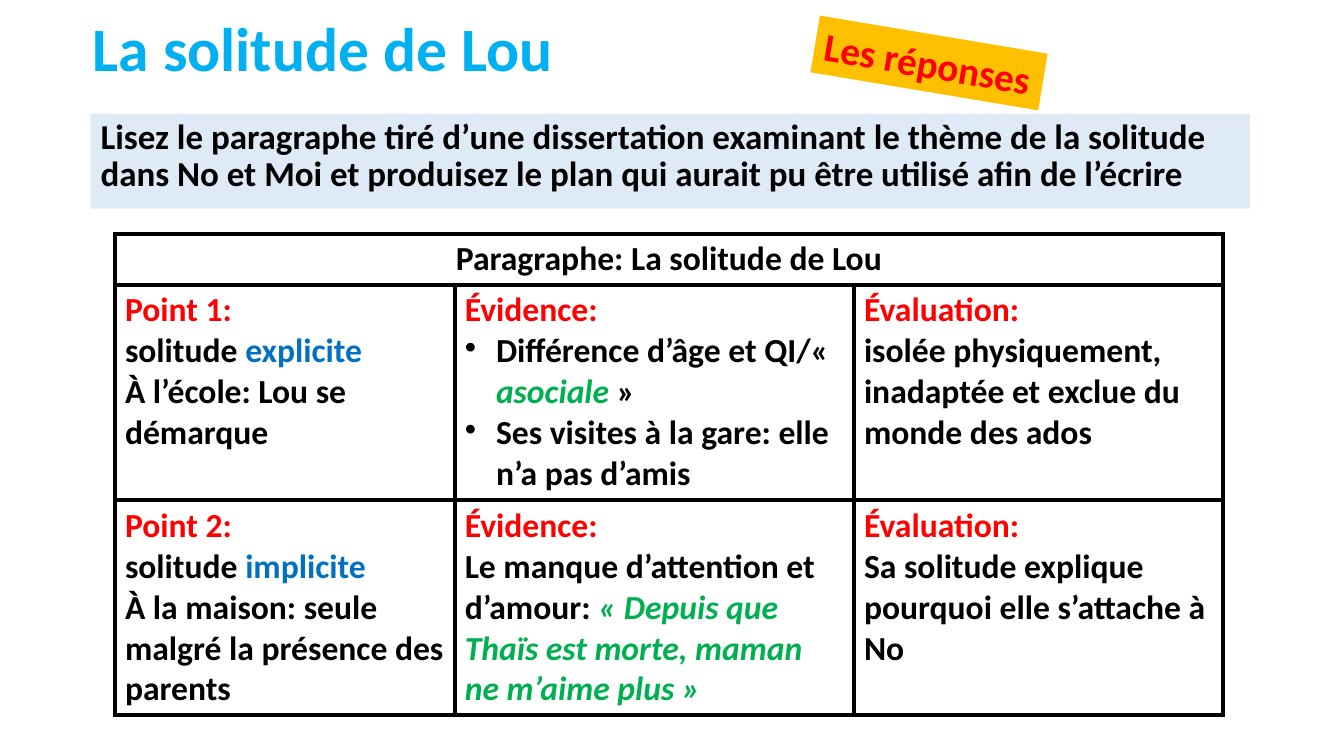
import pptx
import pptx.dml.color
import pptx.enum.shapes
import pptx.enum.text
import pptx.oxml
import pptx.oxml.ns
import pptx.util
from pptx.util import Inches

COLOURS = {
    "title": "00B0F0", "band": "DEEBF7", "tag": "FFC000", "text": "000000",
    "heading": "FF0000", "key": "0070C0", "quote": "00B050", "paper": "FFFFFF",
}
ALIGN = pptx.enum.text.PP_ALIGN
ANCHOR = pptx.enum.text.MSO_ANCHOR

COLUMN_WIDTHS = [3.37, 3.96, 3.66]
ROW_HEIGHTS = [0.5, 2.1, 2.1]
PLAN_HEADING = "Paragraphe: La solitude de Lou"
PLAN = [
    [
        ("Point 1:", [[("solitude ", "text"), ("explicite", "key")],
                      [("À l’école: Lou se démarque", "text")]], False),
        ("Évidence:", [[("Différence d’âge et QI/« ", "text"), ("asociale", "quote"), (" »", "text")],
                       [("Ses visites à la gare: elle n’a pas d’amis", "text")]], True),
        ("Évaluation:", [[("isolée physiquement, inadaptée et exclue du monde des ados", "text")]], False),
    ],
    [
        ("Point 2:", [[("solitude ", "text"), ("implicite", "key")],
                      [("À la maison: seule malgré la présence des parents", "text")]], False),
        ("Évidence:", [[("Le manque d’attention et d’amour: ", "text"),
                        ("« Depuis que Thaïs est morte, maman ne m’aime plus »", "quote")]], False),
        ("Évaluation:", [[("Sa solitude explique pourquoi elle s’attache à No", "text")]], False),
    ],
]


def colour(name):
    """Return the named colour."""
    return pptx.dml.color.RGBColor.from_string(COLOURS[name])


def write(para, spans, size=24, align=ALIGN.LEFT, spacing=None, bullet=False):
    """Write (text, colour) spans in a paragraph; quotes are italic."""
    if bullet:
        indent = Inches(0.31)
        properties = para._p.get_or_add_pPr()
        properties.set("marL", str(indent))
        properties.set("indent", str(-indent))
        mark = pptx.oxml.parse_xml(f'<a:buChar {pptx.oxml.ns.nsdecls("a")} char="•"/>')
        properties.append(mark)
    para.alignment = align
    if spacing:
        para.line_spacing = spacing
    for text, name in spans:
        span = para.add_run()
        span.text = text
        span.font.name = "Calibri"
        span.font.size = pptx.util.Pt(size)
        span.font.bold = True
        span.font.italic = name == "quote"
        span.font.color.rgb = colour(name)


def place_title(page, left, top, width, height):
    """Place and format the slide title."""
    title = page.shapes.title
    title.left, title.top, title.width, title.height = map(Inches, (left, top, width, height))
    title.text_frame.vertical_anchor = ANCHOR.MIDDLE
    title.text_frame.auto_size = pptx.enum.text.MSO_AUTO_SIZE.NONE
    write(title.text_frame.paragraphs[0], [("La solitude de Lou", "title")], size=44, spacing=0.9)


def add_label(page, left, top, width, height, text, fill, ink="text", size=25,
              wrap=True, turn=0, spacing=None):
    """Add a filled rectangle with text from its top left."""
    label = page.shapes.add_shape(pptx.enum.shapes.MSO_SHAPE.RECTANGLE,
                                  *map(Inches, (left, top, width, height)))
    label.shadow.inherit = False
    label.fill.solid()
    label.fill.fore_color.rgb = colour(fill)
    label.line.fill.background()
    label.rotation = turn
    label.text_frame.word_wrap = wrap
    label.text_frame.vertical_anchor = ANCHOR.TOP
    write(label.text_frame.paragraphs[0], [(text, ink)], size=size, spacing=spacing)


def format_cell(cell):
    """Give a cell a plain fill and thick black borders."""
    properties = cell._tc.get_or_add_tcPr()
    for side in ("lnL", "lnR", "lnT", "lnB"):
        properties.append(pptx.oxml.parse_xml(
            f'<a:{side} {pptx.oxml.ns.nsdecls("a")} w="{pptx.util.Pt(3)}"><a:solidFill>'
            f'<a:srgbClr val="{COLOURS["text"]}"/></a:solidFill></a:{side}>'))
    cell.fill.solid()
    cell.fill.fore_color.rgb = colour("paper")


def fill_cell(cell, heading, lines, bullet):
    """Write a red heading and the lines below it."""
    frame = cell.text_frame
    write(frame.paragraphs[0], [(heading, "heading")])
    for spans in lines:
        write(frame.add_paragraph(), spans, bullet=bullet)


def add_plan(page, left, top, width, height):
    """Add the table with the essay plan."""
    table = page.shapes.add_table(len(ROW_HEIGHTS), len(COLUMN_WIDTHS),
                                  *map(Inches, (left, top, width, height))).table
    for column, size in zip(table.columns, COLUMN_WIDTHS):
        column.width = Inches(size)
    for row, size in zip(table.rows, ROW_HEIGHTS):
        row.height = Inches(size)
    for cell in table.iter_cells():
        format_cell(cell)
    table.cell(0, 0).merge(table.cell(0, len(COLUMN_WIDTHS) - 1))
    write(table.cell(0, 0).text_frame.paragraphs[0], [(PLAN_HEADING, "text")], align=ALIGN.CENTER)
    for row, entries in enumerate(PLAN, start=1):
        for column, entry in enumerate(entries):
            fill_cell(table.cell(row, column), *entry)


def main():
    """Build and save the slide."""
    deck = pptx.Presentation()
    deck.slide_width, deck.slide_height = Inches(13.33), Inches(7.5)
    page = deck.slides.add_slide(deck.slide_layouts[5])
    place_title(page, 0.82, 0, 11.5, 1.03)
    add_label(page, 0.9, 1.13, 11.5, 0.94,
              "Lisez le paragraphe tiré d’une dissertation examinant le thème de la solitude "
              "dans No et Moi et produisez le plan qui aurait pu être utilisé afin de l’écrire",
              "band", spacing=0.9)
    add_label(page, 8.07, 0.34, 2.29, 0.57, "Les réponses", "tag",
              ink="heading", size=28, wrap=False, turn=9.5)
    add_plan(page, 1.14, 2.32, sum(COLUMN_WIDTHS), sum(ROW_HEIGHTS))
    deck.save("out.pptx")


if __name__ == "__main__":
    main()
